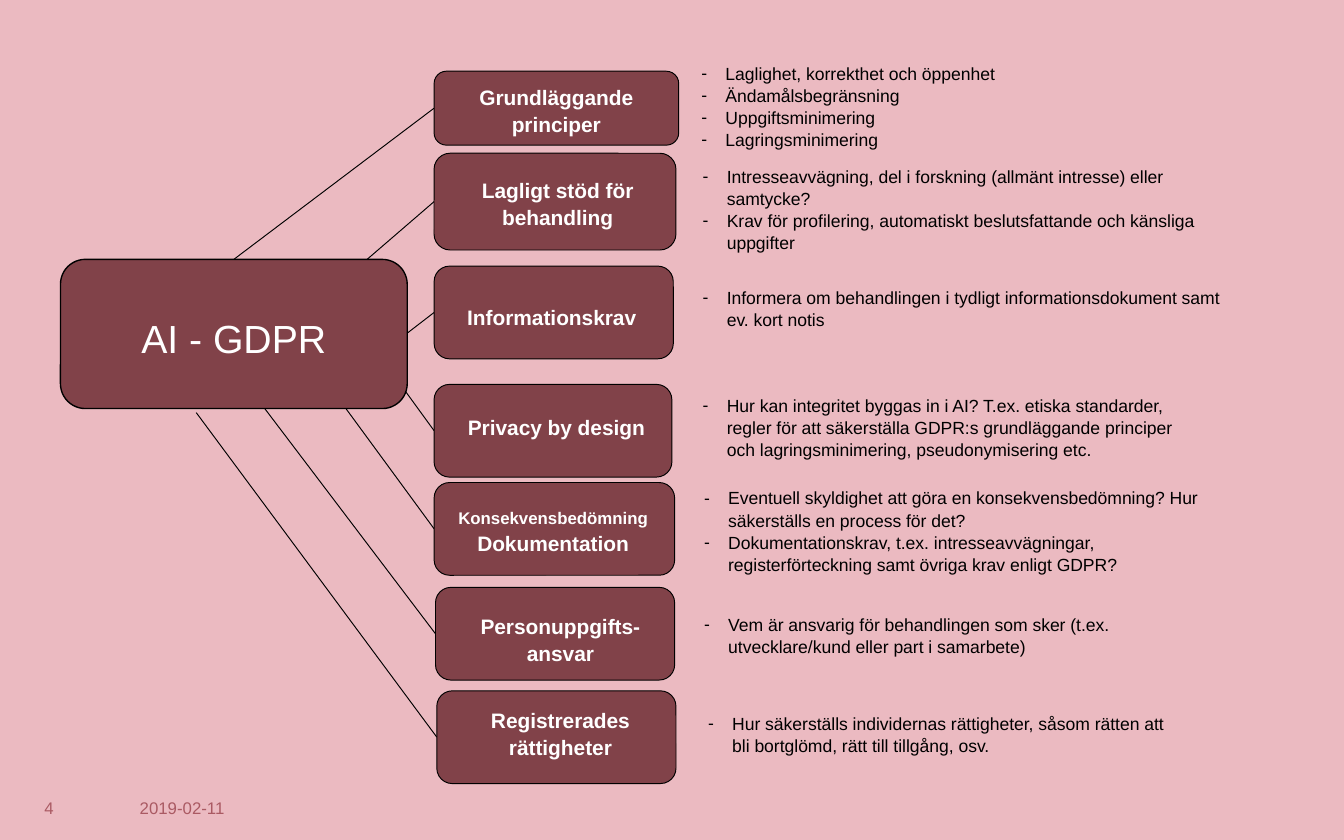
from dataclasses import dataclass

from lxml.etree import SubElement
from pptx import Presentation
from pptx.dml.color import RGBColor
from pptx.enum.shapes import MSO_CONNECTOR, MSO_SHAPE
from pptx.enum.text import MSO_ANCHOR, PP_ALIGN
from pptx.oxml.ns import qn
from pptx.util import Inches, Pt

PINK = RGBColor(0xEB, 0xBA, 0xC1)
WINE = RGBColor(0x81, 0x42, 0x49)
ROSE = RGBColor(0xAA, 0x5A, 0x63)
WHITE = RGBColor(0xFF, 0xFF, 0xFF)
BLACK = RGBColor(0x00, 0x00, 0x00)

COLUMNS, ROWS = 100, 62.5
HEADING, SMALL = 11.2, 9


@dataclass
class Topic:
    """Places are (left, top, width, height) in grid cells; hub is the line's far end."""
    box: tuple
    label_at: tuple
    label: list
    bullets_at: tuple
    bullets: list
    hub: tuple


TOPICS = [
    Topic((32.3, 5.3, 18.2, 5.5), (33.6, 6.5, 15.6, 3.4),
          [("Grundläggande principer", HEADING)],
          (51.2, 4.1, 43.6, 9),
          ["Laglighet, korrekthet och öppenhet", "Ändamålsbegränsning",
           "Uppgiftsminimering", "Lagringsminimering"],
          (17.4, 19.3)),
    Topic((32.3, 11.4, 18, 7.2), (31.8, 12, 19.4, 6.2),
          [("Lagligt stöd för behandling", HEADING)],
          (51.3, 11.8, 40.3, 9),
          ["Intresseavvägning, del i forskning (allmänt intresse) eller samtycke?",
           "Krav för profilering, automatiskt beslutsfattande och känsliga uppgifter"],
          (24.3, 21.9)),
    Topic((32.3, 19.8, 17.8, 6.9), (32.8, 19.5, 16.5, 8.1),
          [("Informationskrav", HEADING)],
          (51.3, 20.8, 41.6, 4.2),
          ["Informera om behandlingen i tydligt informationsdokument samt "
           "ev. kort notis"],
          (29.9, 25.1)),
    Topic((32.3, 28.6, 17.7, 6.9), (33, 28.9, 16.8, 5.7),
          [("Privacy by design", HEADING)],
          (51.3, 28.8, 37.2, 5.8),
          ["Hur kan integritet byggas in i AI? T.ex. etiska standarder, regler "
           "för att säkerställa GDPR:s grundläggande principer och "
           "lagringsminimering, pseudonymisering etc."],
          (29.5, 28.2)),
    Topic((32.3, 35.9, 17.9, 6.9), (32.7, 35.9, 16.9, 6.9),
          [("Konsekvensbedömning", SMALL), (" Dokumentation", HEADING)],
          (51.4, 35.7, 40.3, 7.4),
          ["Eventuell skyldighet att göra en konsekvensbedömning? Hur "
           "säkerställs en process för det?",
           "Dokumentationskrav, t.ex. intresseavvägningar, "
           "registerförteckning samt övriga krav enligt GDPR?"],
          (20.9, 23.8)),
    Topic((32.4, 43.7, 17.8, 6.9), (33.4, 44.7, 16.6, 5.7),
          [("Personuppgifts-ansvar", HEADING)],
          (51.4, 45.1, 36, 4.2),
          ["Vem är ansvarig för behandlingen som sker (t.ex. utvecklare/kund "
           "eller part i samarbete)"],
          (19.7, 30.4)),
    Topic((32.5, 51.4, 17.8, 6.9), (33.4, 51.7, 16.6, 5.7),
          [("Registrerades rättigheter", HEADING)],
          (51.7, 52.5, 36, 4.2),
          ["Hur säkerställs individernas rättigheter, såsom rätten att bli "
           "bortglömd, rätt till tillgång, osv."],
          (14.6, 30.7)),
]


class Deck:
    """Holds the style and the current slide; lengths are grid cells."""
    font = "Arial"
    bullet_size = 9.4
    indent = Inches(0.18)
    line_spacing = 1.05

    def __init__(self):
        self.prs = Presentation()
        self.prs.slide_width, self.prs.slide_height = Inches(10), Inches(6.25)
        self.slide = self.prs.slides.add_slide(self.prs.slide_layouts[6])
        background = self.slide.background.fill
        background.solid()
        background.fore_color.rgb = PINK

    def cells(self, *lengths):
        """Turn alternating column and row counts into slide lengths."""
        units = (self.prs.slide_width / COLUMNS, self.prs.slide_height / ROWS)
        return [round(n * units[i % 2]) for i, n in enumerate(lengths)]

    def line(self, start, end):
        sp = self.slide.shapes.add_connector(
            MSO_CONNECTOR.STRAIGHT, *self.cells(*start, *end))
        sp.line.color.rgb = BLACK
        sp.line.width = Pt(0.5)
        SubElement(sp._element.spPr, qn("a:effectLst"))

    def box(self, at, weight=0.5):
        sp = self.slide.shapes.add_shape(
            MSO_SHAPE.ROUNDED_RECTANGLE, *self.cells(*at))
        sp.shadow.inherit = False
        sp.fill.solid()
        sp.fill.fore_color.rgb = WINE
        sp.line.color.rgb = BLACK
        sp.line.width = Pt(weight)

    def frame(self, at, **formats):
        tf = self.slide.shapes.add_textbox(*self.cells(*at)).text_frame
        for name, value in {"word_wrap": True, **formats}.items():
            setattr(tf, name, value)
        return tf

    def run(self, p, text, size, color, bold=False):
        r = p.add_run()
        r.text = text
        for name, value in {"name": self.font, "size": Pt(size), "bold": bold}.items():
            setattr(r.font, name, value)
        r.font.color.rgb = color

    def label(self, at, runs, bold=True):
        p = self.frame(at, vertical_anchor=MSO_ANCHOR.MIDDLE).paragraphs[0]
        p.alignment = PP_ALIGN.CENTER
        p.line_spacing = self.line_spacing
        for text, size in runs:
            self.run(p, text, size, WHITE, bold)

    def bullets(self, at, items):
        tf = self.frame(at)
        for i, item in enumerate(items):
            p = tf.add_paragraph() if i else tf.paragraphs[0]
            p.line_spacing = self.line_spacing
            pPr = p._p.get_or_add_pPr()
            pPr.set("marL", str(self.indent))
            pPr.set("indent", str(-self.indent))
            SubElement(pPr, qn("a:buFont"), typeface=self.font)
            SubElement(pPr, qn("a:buChar"), char="-")
            self.run(p, item, self.bullet_size, BLACK)

    def footer(self, at, text):
        margins = dict.fromkeys(
            ("margin_left", "margin_top", "margin_right", "margin_bottom"), 0)
        tf = self.frame(at, vertical_anchor=MSO_ANCHOR.MIDDLE, **margins)
        self.run(tf.paragraphs[0], text, SMALL, ROSE)

    def topic(self, topic):
        left, top, _, height = topic.box
        self.line((left, top + height / 2), topic.hub)
        self.box(topic.box)
        self.label(topic.label_at, topic.label)
        self.bullets(topic.bullets_at, topic.bullets)


def main():
    deck = Deck()
    for topic in TOPICS:
        deck.topic(topic)
    deck.box((4.5, 19.3, 25.8, 11.1), weight=0.75)
    deck.label((4.9, 22.8, 25, 4.5), [("AI - GDPR", 21)], bold=False)
    deck.footer((3.3, 59.3, 6.1, 1.6), "4")
    deck.footer((10.4, 59.3, 9.3, 1.6), "2019-02-11")
    deck.prs.save("out.pptx")


if __name__ == "__main__":
    main()
